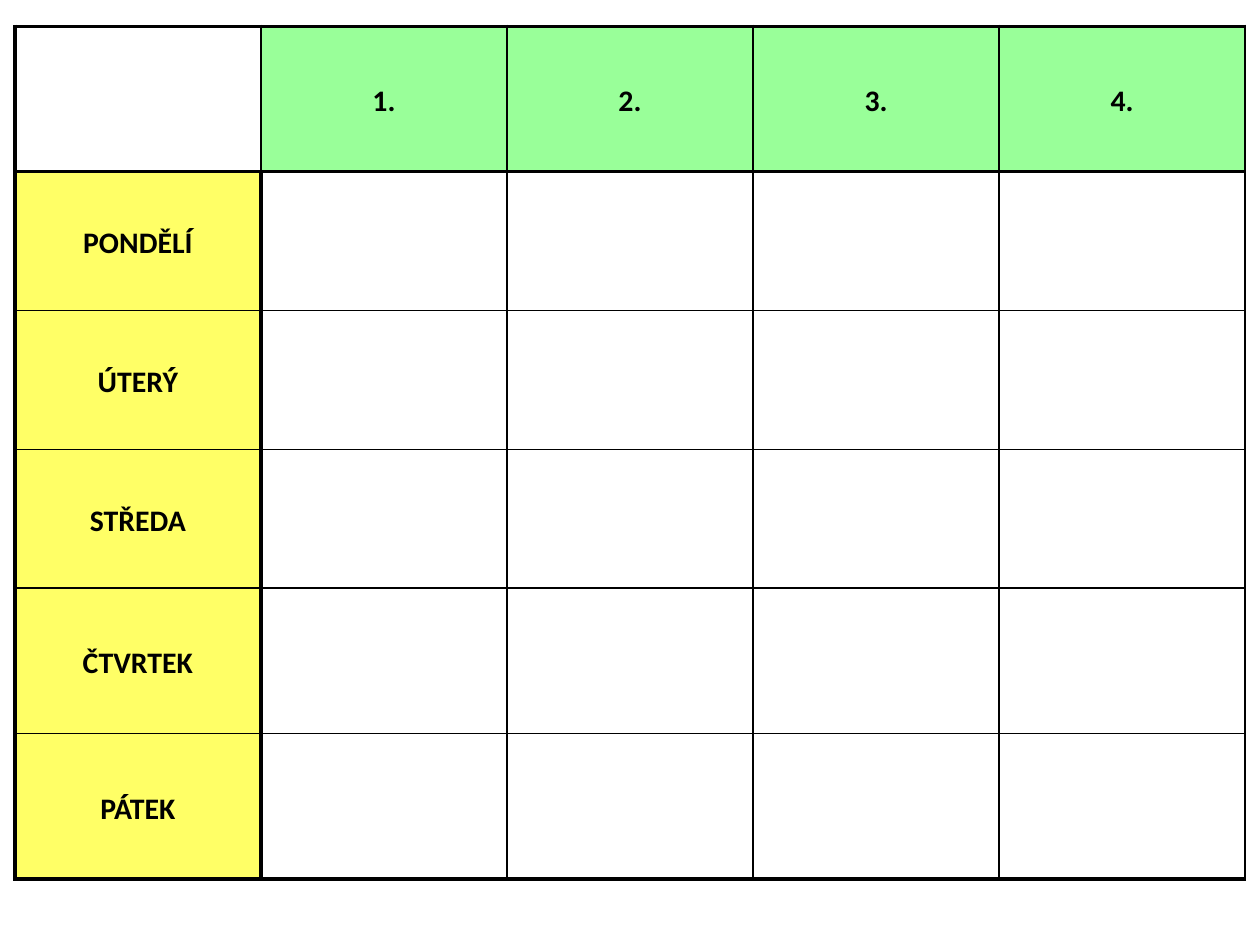
import lxml.etree
import pptx
import pptx.dml.color
import pptx.enum.text
import pptx.oxml.ns
import pptx.util

Cm = pptx.util.Cm
Pt = pptx.util.Pt
THIN, THICK = 1, 2.25


def write_cell(cell, text, *, fill=None, size=17, font="Calibri", color="000000", borders):
    """Format one cell; borders maps L, R, T and B to widths in points."""
    cell.margin_left = cell.margin_right = Cm(0.15)
    cell.margin_top = cell.margin_bottom = 0
    cell.vertical_anchor = pptx.enum.text.MSO_ANCHOR.MIDDLE
    properties = cell._tc.get_or_add_tcPr()
    for side in "LRTB":
        line = lxml.etree.SubElement(properties, pptx.oxml.ns.qn(f"a:ln{side}"), w=str(Pt(borders[side])))
        solid = lxml.etree.SubElement(line, pptx.oxml.ns.qn("a:solidFill"))
        lxml.etree.SubElement(solid, pptx.oxml.ns.qn("a:srgbClr"), val="000000")
    if fill:
        cell.fill.solid()
        cell.fill.fore_color.rgb = rgb(fill)
    else:
        cell.fill.background()
    if text:
        para = cell.text_frame.paragraphs[0]
        para.alignment = pptx.enum.text.PP_ALIGN.CENTER
        para.line_spacing = 1.15
        span = para.add_run()
        span.text = text
        span.font.name = font
        span.font.size = Pt(size)
        span.font.bold = True
        span.font.color.rgb = rgb(color)


def rgb(value):
    return pptx.dml.color.RGBColor.from_string(value)


deck = pptx.Presentation()
deck.slide_width, deck.slide_height = Cm(25.4), Cm(19.05)
page = deck.slides.add_slide(deck.slide_layouts[6])

lessons = ["1.", "2.", "3.", "4."]
days = ["PONDĚLÍ", "ÚTERÝ", "STŘEDA", "ČTVRTEK", "PÁTEK"]
row_heights = [2.93, 2.8, 2.8, 2.8, 2.93, 2.93]
column_width = 4.96
row_count, column_count = len(days) + 1, len(lessons) + 1

frame = page.shapes.add_table(
    row_count, column_count, Cm(0.3), Cm(0.53), Cm(column_width * column_count), Cm(sum(row_heights))
)
timetable = frame.table
timetable.first_row = timetable.horz_banding = False
for column in timetable.columns:
    column.width = Cm(column_width)
for row, height in zip(timetable.rows, row_heights):
    row.height = Cm(height)

for row in range(row_count):
    for column in range(column_count):
        text, fill = "", None
        if row == 0 and column > 0:
            text, fill = lessons[column - 1], "99FF99"
        elif column == 0 and row > 0:
            text, fill = days[row - 1], "FFFF66"
        borders = {
            "L": THICK if column == 0 or (column == 1 and row > 0) else THIN,
            "R": THICK if column == 0 and row > 0 else THIN,
            "T": THICK if row <= 1 else THIN,
            "B": THICK if row in (0, row_count - 1) else THIN,
        }
        write_cell(timetable.cell(row, column), text, fill=fill, borders=borders)

deck.save("out.pptx")
